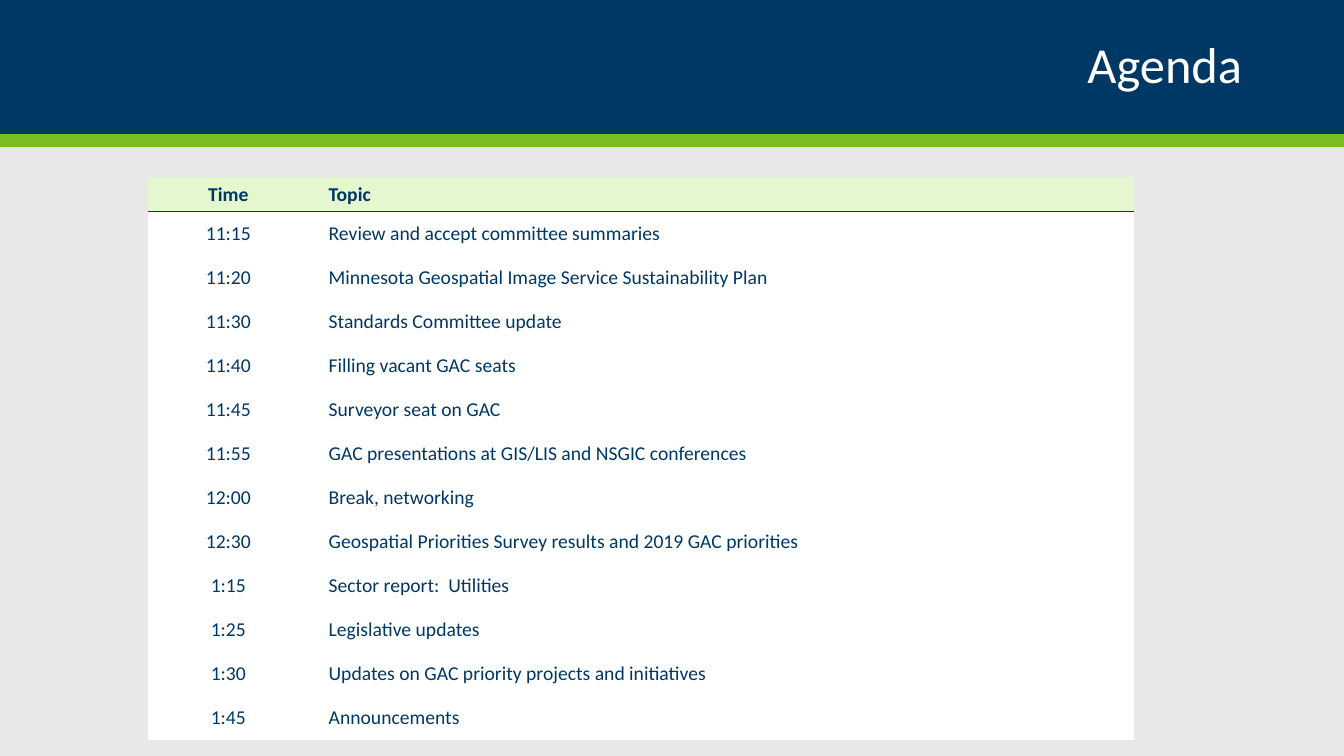
from dataclasses import dataclass

import pptx
import pptx.dml.color
import pptx.enum.shapes
import pptx.enum.text
import pptx.oxml
import pptx.oxml.ns
import pptx.util

Inches = pptx.util.Inches
Align = pptx.enum.text.PP_ALIGN
Middle = pptx.enum.text.MSO_ANCHOR.MIDDLE


@dataclass(frozen=True)
class Theme:
    font: str = "Calibri"
    title_size: int = 36
    table_size: int = 14
    navy: str = "003865"
    green: str = "78BE21"
    pale_green: str = "E4F7CE"
    white: str = "FFFFFF"
    background: str = "E8E8E8"


PAGE_WIDTH, PAGE_HEIGHT = 13.33, 7.5
BAND_HEIGHT, STRIPE_HEIGHT = 1.33, 0.13
NO_TABLE_STYLE = "{2D5ABB26-0587-4C30-8999-92F81FD0307C}"

AGENDA = [
    ("Time", "Topic"),
    ("11:15", "Review and accept committee summaries"),
    ("11:20", "Minnesota Geospatial Image Service Sustainability Plan"),
    ("11:30", "Standards Committee update"),
    ("11:40", "Filling vacant GAC seats"),
    ("11:45", "Surveyor seat on GAC"),
    ("11:55", "GAC presentations at GIS/LIS and NSGIC conferences"),
    ("12:00", "Break, networking"),
    ("12:30", "Geospatial Priorities Survey results and 2019 GAC priorities"),
    ("1:15", "Sector report:  Utilities"),
    ("1:25", "Legislative updates"),
    ("1:30", "Updates on GAC priority projects and initiatives"),
    ("1:45", "Announcements"),
]


def rgb(value):
    return pptx.dml.color.RGBColor.from_string(value)


def write_text(frame, text, *, font, size, color, bold=False, align=Align.LEFT, spacing=1.0):
    para = frame.paragraphs[0]
    para.alignment = align
    para.line_spacing = spacing
    span = para.add_run()
    span.text = text
    span.font.name = font
    span.font.size = pptx.util.Pt(size)
    span.font.bold = bold
    span.font.color.rgb = rgb(color)


class Builder:
    def __init__(self, theme, page):
        self.theme = theme
        self.page = page
        page.background.fill.solid()
        page.background.fill.fore_color.rgb = rgb(theme.background)

    def band(self, top, height, color):
        box = self.page.shapes.add_shape(
            pptx.enum.shapes.MSO_SHAPE.RECTANGLE,
            0, Inches(top), Inches(PAGE_WIDTH), Inches(height))
        box.shadow.inherit = False
        box.fill.solid()
        box.fill.fore_color.rgb = rgb(color)
        box.line.fill.background()

    def title(self, text, left, top, width, height):
        box = self.page.shapes.title
        box.left, box.top = Inches(left), Inches(top)
        box.width, box.height = Inches(width), Inches(height)
        box.element.getparent().append(box.element)  # bring in front of the bands
        box.text_frame.vertical_anchor = Middle
        write_text(box.text_frame, text, font=self.theme.font, size=self.theme.title_size,
                   color=self.theme.white, align=Align.RIGHT, spacing=0.9)

    def table(self, rows, left, top, widths, header_height, row_height):
        height = header_height + row_height * (len(rows) - 1)
        frame = self.page.shapes.add_table(
            len(rows), len(widths), Inches(left), Inches(top),
            Inches(sum(widths)), Inches(height))
        table = frame.table
        table.horz_banding = False
        table._tbl.tblPr.find(pptx.oxml.ns.qn("a:tableStyleId")).text = NO_TABLE_STYLE
        for column, width in zip(table.columns, widths):
            column.width = Inches(width)
        for r, texts in enumerate(rows):
            header = r == 0
            table.rows[r].height = Inches(header_height if header else row_height)
            for c, text in enumerate(texts):
                self.cell(table.cell(r, c), text, header, centered=c == 0)

    def cell(self, cell, text, header, centered):
        cell.vertical_anchor = Middle
        cell.margin_left = Inches(0.1 if centered else 0.2)
        cell.margin_right = Inches(0.1)
        cell.margin_top = cell.margin_bottom = Inches(0.05 if header else 0.1)
        cell.fill.solid()
        cell.fill.fore_color.rgb = rgb(self.theme.pale_green if header else self.theme.white)
        write_text(cell.text_frame, text, font=self.theme.font, size=self.theme.table_size,
                   color=self.theme.navy, bold=header,
                   align=Align.CENTER if centered else Align.LEFT)
        if header:
            self.bottom_border(cell)

    def bottom_border(self, cell):
        border = pptx.oxml.parse_xml(
            f'<a:lnB {pptx.oxml.ns.nsdecls("a")} w="{pptx.util.Pt(1)}"><a:solidFill>'
            f'<a:srgbClr val="{self.theme.navy}"/></a:solidFill></a:lnB>')
        cell._tc.get_or_add_tcPr().insert(0, border)


def main():
    deck = pptx.Presentation()
    deck.slide_width, deck.slide_height = Inches(PAGE_WIDTH), Inches(PAGE_HEIGHT)
    theme = Theme()
    title_only = deck.slide_layouts.get_by_name("Title Only")
    builder = Builder(theme, deck.slides.add_slide(title_only))

    # Header
    builder.band(0, BAND_HEIGHT, theme.navy)
    builder.band(BAND_HEIGHT, STRIPE_HEIGHT, theme.green)
    builder.title("Agenda", 0.92, 0.17, 11.5, 1)

    # Agenda table
    builder.table(AGENDA, 1.47, 1.76, widths=(1.59, 8.19),
                  header_height=0.32, row_height=0.43)

    deck.save("out.pptx")


if __name__ == "__main__":
    main()
